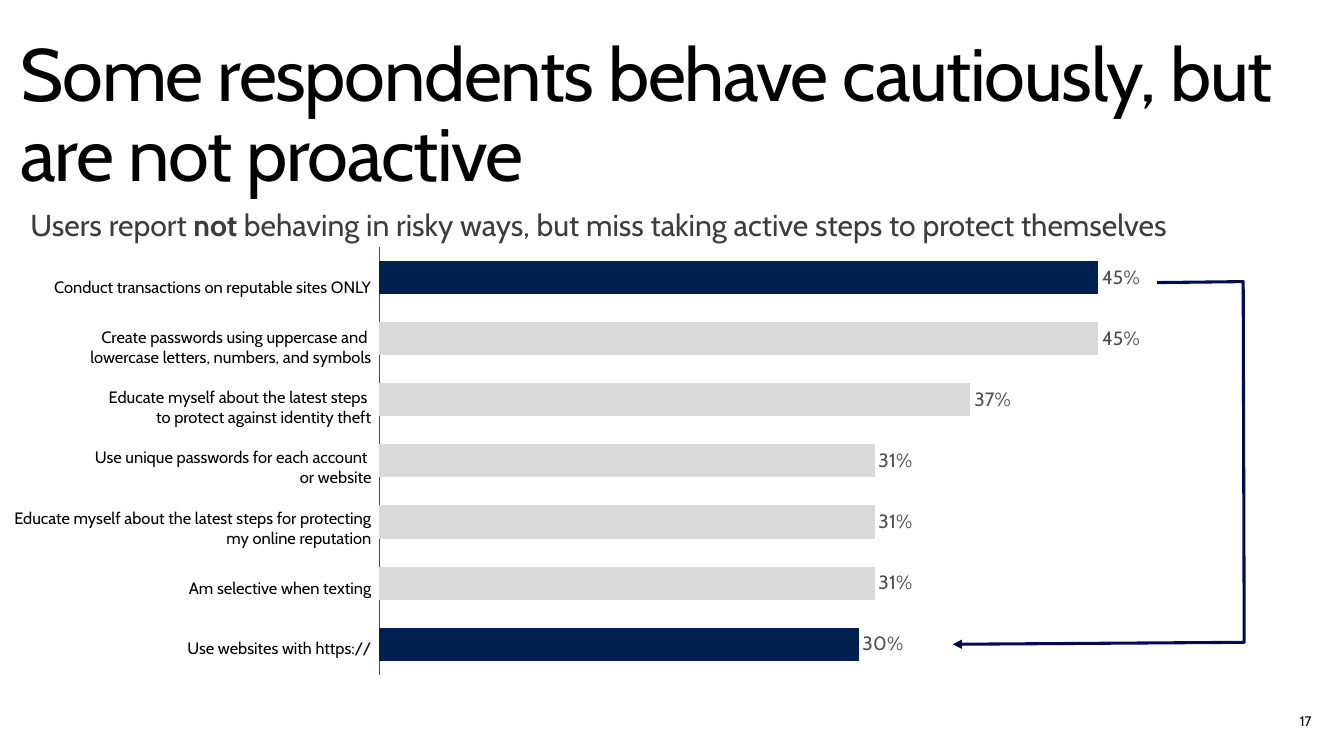
from lxml.etree import SubElement
from pptx import Presentation
from pptx.chart.data import CategoryChartData
from pptx.dml.color import RGBColor
from pptx.enum.chart import XL_CHART_TYPE as ChartType, XL_LABEL_POSITION as LabelPosition
from pptx.enum.chart import XL_TICK_LABEL_POSITION as TickLabels, XL_TICK_MARK as TickMark
from pptx.enum.text import MSO_ANCHOR as Anchor, PP_ALIGN as Align
from pptx.oxml import parse_xml
from pptx.oxml.ns import nsdecls, qn
from pptx.util import Inches, Pt

# Content
TITLE = "Some respondents behave cautiously, but are not proactive"
SUBTITLE = [
    ("Users report ", False),
    ("not", True),
    (" behaving in risky ways, but miss taking active steps to protect themselves", False),
]
PAGE_NUMBER = "17"
# Habit, share of respondents, highlighted
HABITS = [
    ("Conduct transactions on reputable sites ONLY", 0.45, True),
    ("Create passwords using uppercase and \nlowercase letters, numbers, and symbols", 0.45, False),
    ("Educate myself about the latest steps \nto protect against identity theft", 0.37, False),
    ("Use unique passwords for each account \nor website", 0.31, False),
    ("Educate myself about the latest steps for protecting my online reputation", 0.31, False),
    ("Am selective when texting", 0.31, False),
    ("Use websites with https://", 0.3, True),
]
COLORS = {
    "black": "000000", "subtitle": "3C3C3C", "label": "505050",
    "highlight": "002050", "bar": "D9D9D9", "arrow": "000C50",
}
FONT = "Cabin"

# Layout, in inches
WIDTH, HEIGHT = 13.6, 7.65
LABEL_TOP, LABEL_WIDTH, ROW_HEIGHT = 2.6, 3.76, 0.61
CHART_BOX = (3.67, 2.41, 8.42, 4.51)
PLOT_SHARES = {"x": 0.02, "y": 0.02, "w": 0.96, "h": 0.96}
ARROW_POINTS = [(11.71, 2.86), (12.58, 2.85), (12.59, 6.5), (9.64, 6.52)]


def color(name):
    return RGBColor.from_string(COLORS[name])


def style(font, size, name, bold=None):
    font.name, font.size, font.bold = FONT, Pt(size), bold
    font.color.rgb = color(name)


def inches(*lengths):
    return [Inches(length) for length in lengths]


def add_text(page, place, parts, size, name, align=Align.LEFT, anchor=Anchor.TOP):
    frame = page.shapes.add_textbox(*inches(*place)).text_frame
    frame.word_wrap, frame.vertical_anchor = True, anchor
    para = frame.paragraphs[0]
    para.alignment = align
    for text, bold in parts:
        span = para.add_run()
        span.text = text
        style(span.font, size, name, bold)


def add_title(page):
    title = page.shapes.title
    title.left, title.top, title.width, title.height = inches(0.05, 0.28, 13.71, 1)
    frame = title.text_frame
    frame.text = TITLE
    frame.word_wrap, frame.vertical_anchor = True, Anchor.TOP
    frame.margin_left = frame.margin_right = Inches(0.16)
    frame.margin_top = frame.margin_bottom = Inches(0.1)
    para = frame.paragraphs[0]
    para.alignment, para.line_spacing = Align.LEFT, 0.9
    span = para.runs[0]
    style(span.font, 54, "black")
    span.font._element.set("spc", "-100")


def add_chart(page):
    # Bars are drawn from the bottom up
    bars = HABITS[::-1]
    data = CategoryChartData(number_format="0%")
    data.categories = [str(number) for number in range(1, len(bars) + 1)]
    data.add_series("Series 1", [share for _, share, _ in bars])
    chart = page.shapes.add_chart(ChartType.BAR_CLUSTERED, *inches(*CHART_BOX), data).chart
    chart.has_legend = chart.has_title = False
    style(chart.font, 18, "label")

    # Axes
    values, categories = chart.value_axis, chart.category_axis
    values.minimum_scale, values.maximum_scale = 0, 0.5
    values.has_major_gridlines = values.visible = False
    categories.tick_label_position = TickLabels.NONE
    categories.major_tick_mark = categories.minor_tick_mark = TickMark.NONE
    categories.format.line.color.rgb = color("label")
    categories.format.line.width = Pt(0.75)

    # Bars and their labels
    plot = chart.plots[0]
    plot.gap_width, plot.vary_by_categories = 85, False
    series = plot.series[0]
    series.format.fill.solid()
    series.format.fill.fore_color.rgb = color("highlight")
    for index, (_, _, highlighted) in enumerate(bars):
        if not highlighted:
            fill = series.points[index].format.fill
            fill.solid()
            fill.fore_color.rgb = color("bar")
    plot.has_data_labels = True
    labels = plot.data_labels
    labels.show_value, labels.position = True, LabelPosition.OUTSIDE_END
    labels.number_format, labels.number_format_is_linked = "0%", False
    style(labels.font, 14, "label")

    # Fixed plot area
    shares = "".join(f'<c:{key} val="{share}"/>' for key, share in PLOT_SHARES.items())
    layout = parse_xml(
        f'<c:layout {nsdecls("c")}><c:manualLayout><c:layoutTarget val="inner"/>'
        f'<c:xMode val="edge"/><c:yMode val="edge"/>{shares}</c:manualLayout></c:layout>')
    area = chart._chartSpace.find(".//" + qn("c:plotArea"))
    for old in area.findall(qn("c:layout")):
        area.remove(old)
    area.insert(0, layout)


def add_arrow(page):
    start, *corners = [tuple(inches(*point)) for point in ARROW_POINTS]
    builder = page.shapes.build_freeform(*start)
    builder.add_line_segments(corners, close=False)
    arrow = builder.convert_to_shape()
    arrow.shadow.inherit = False
    arrow.fill.background()
    arrow.line.color.rgb = color("arrow")
    arrow.line.width = Pt(2.25)
    SubElement(arrow.line._get_or_add_ln(), qn("a:tailEnd"), type="triangle")


def add_habit_labels(page):
    count = len(HABITS)
    place = inches(0, LABEL_TOP, LABEL_WIDTH, count * ROW_HEIGHT)
    table = page.shapes.add_table(count, 1, *place).table
    table.first_row = table.horz_banding = False
    for row, (habit, _, _) in enumerate(HABITS):
        table.rows[row].height = Inches(ROW_HEIGHT)
        cell = table.cell(row, 0)
        cell.fill.background()
        cell.vertical_anchor = Anchor.MIDDLE
        cell.margin_left = cell.margin_right = cell.margin_top = cell.margin_bottom = 0
        para = cell.text_frame.paragraphs[0]
        para.text, para.alignment = habit, Align.RIGHT
        for span in para.runs:
            style(span.font, 12, "black")
        for line_break in para._p.findall(qn("a:br")):
            SubElement(line_break, qn("a:rPr"), sz="1200")


def main():
    deck = Presentation()
    deck.slide_width, deck.slide_height = inches(WIDTH, HEIGHT)
    page = deck.slides.add_slide(deck.slide_layouts[5])
    add_chart(page)
    add_arrow(page)
    add_habit_labels(page)
    add_title(page)
    add_text(page, (0.21, 2.04, 13.39, 0.47), SUBTITLE, 22, "subtitle")
    add_text(page, (10.2, 7.09, 3.17, 0.41), [(PAGE_NUMBER, False)], 10, "black",
             Align.RIGHT, Anchor.MIDDLE)
    deck.save("out.pptx")


if __name__ == "__main__":
    main()
